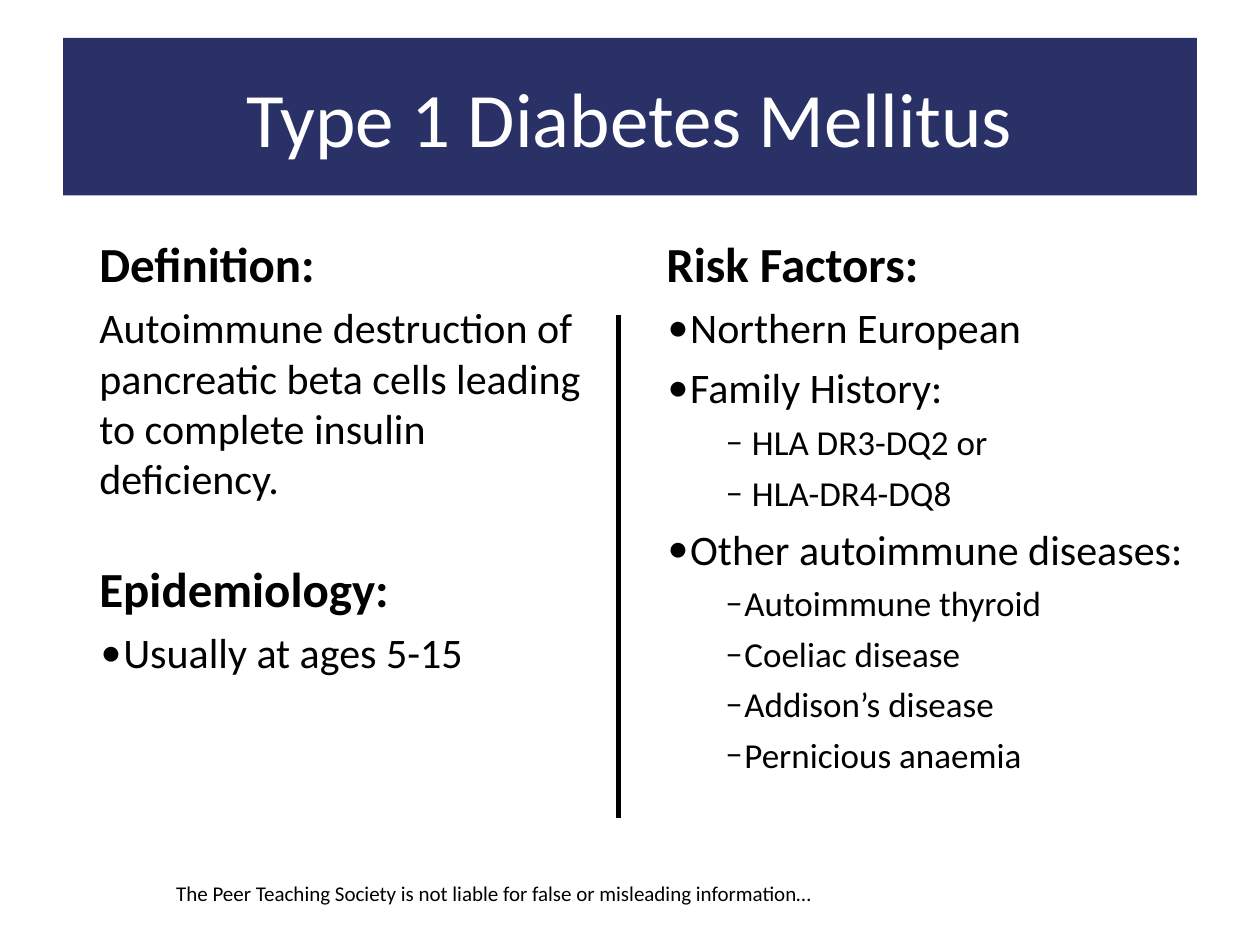
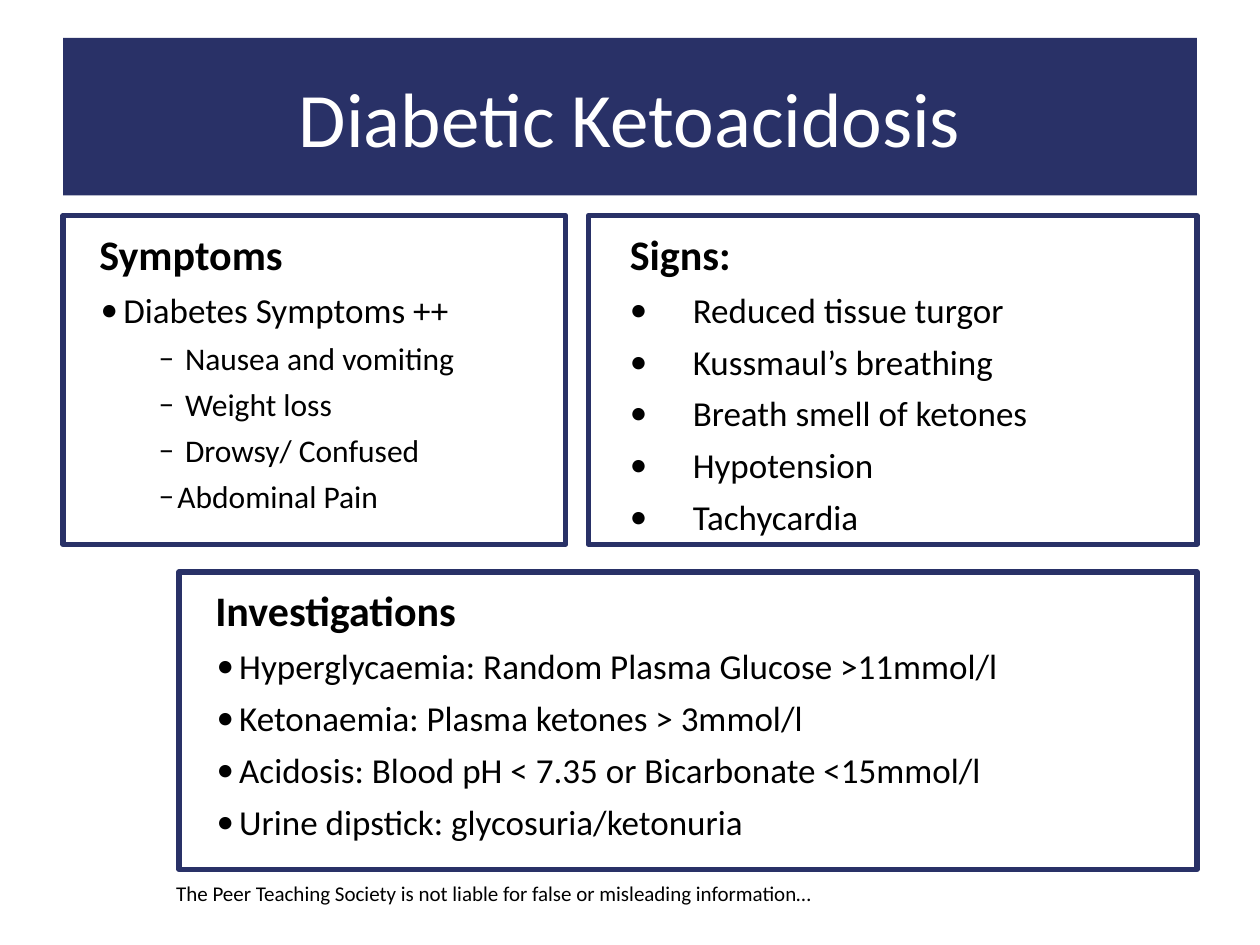
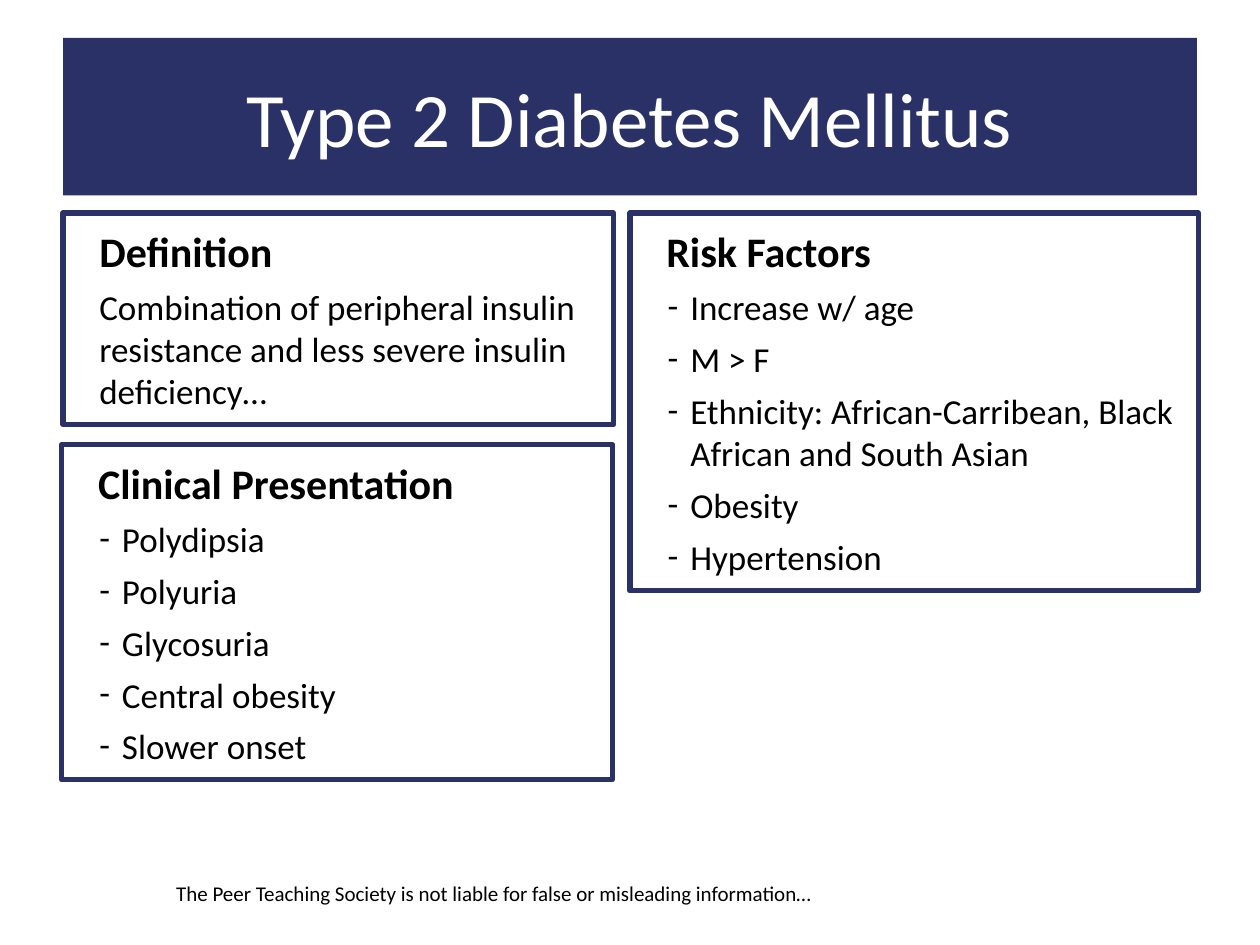
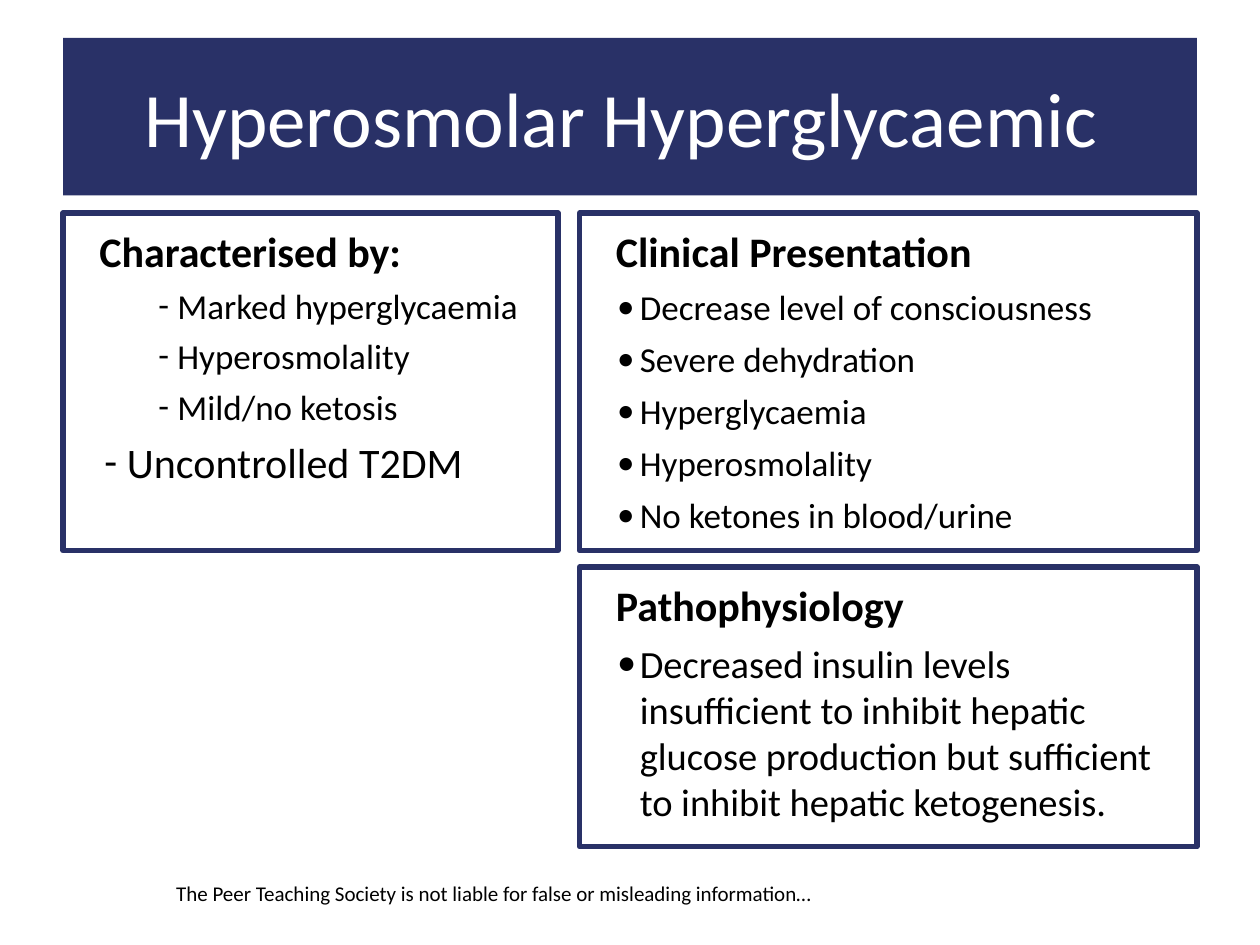
from dataclasses import dataclass

from lxml.etree import SubElement
from pptx import Presentation
from pptx.dml.color import RGBColor
from pptx.enum.shapes import MSO_CONNECTOR, MSO_SHAPE
from pptx.enum.text import MSO_ANCHOR, PP_ALIGN
from pptx.oxml.ns import qn
from pptx.util import Inches, Pt

COLOURS = {"navy": "293167", "text": "000000", "white": "FFFFFF"}
FONT = "Calibri"
FOOTER = "The Peer Teaching Society is not liable for false or misleading information…"
TITLE_ONLY = 5


@dataclass
class Style:
    """Indents in inches, spacing in points and the bullet of a paragraph."""

    left: float = 0.19
    hanging: float = 0
    bullet: str = ""
    space_before: float = 5.6
    level: int = 0


PLAIN = Style()
DOT = Style(0.38, 0.18, "•")
WIDE_DOT = Style(0.73, 0.5, "•")
HYPHEN = Style(0.38, 0.18, "-")
INSET_HYPHEN = Style(0.41, 0.18, "-")
SUB_DASH = Style(0.81, 0.15, "–", 4.8, 1)
SUB_DASH_GAP = Style(0.87, 0.21, "–", 4.8, 1)
SUB_HYPHEN = Style(0.81, 0.15, "-", 4.8, 1)


def colour(name):
    """Return the named colour."""
    return RGBColor.from_string(COLOURS[name])


def place(shape, area):
    """Move a shape to left, top, width and height in inches."""
    shape.left, shape.top, shape.width, shape.height = map(Inches, area)


def prepare_frame(shape, anchor, vertical_inset=0.1):
    """Set wrapping, anchor and insets, and return the text frame."""
    frame = shape.text_frame
    frame.word_wrap = True
    frame.vertical_anchor = anchor
    frame.margin_left = frame.margin_right = Inches(0.1)
    frame.margin_top = frame.margin_bottom = Inches(vertical_inset)
    return frame


def add_run(paragraph, text, size, bold=False, colour_name="text"):
    """Add one formatted run."""
    run = paragraph.add_run()
    run.text = text
    run.font.name = FONT
    run.font.size = Pt(size)
    run.font.bold = bold
    run.font.color.rgb = colour(colour_name)


def apply_style(paragraph, style, first):
    """Give a paragraph its indents, bullet and spacing."""
    properties = paragraph._p.get_or_add_pPr()
    properties.set("marL", str(Inches(style.left)))
    properties.set("indent", str(-Inches(style.hanging)))
    if style.bullet:
        bullet_colour = SubElement(properties, qn("a:buClr"))
        SubElement(bullet_colour, qn("a:srgbClr")).set("val", COLOURS["text"])
        SubElement(properties, qn("a:buFont")).set("typeface", FONT)
        SubElement(properties, qn("a:buChar")).set("char", style.bullet)
    else:
        SubElement(properties, qn("a:buNone"))
    paragraph.level = style.level
    paragraph.alignment = PP_ALIGN.LEFT
    paragraph.space_before = Pt(0 if first else style.space_before)


def add_section(slide, area, heading, groups, heading_size=24, heading_style=PLAIN, framed=True):
    """Write a bold heading and groups of styled lines in an area."""
    if framed:
        shape = slide.shapes.add_shape(MSO_SHAPE.RECTANGLE, *map(Inches, area))
        shape.shadow.inherit = False
        shape.fill.background()
        shape.line.color.rgb = colour("navy")
        shape.line.width = Pt(3)
    else:
        shape = slide.shapes.add_textbox(*map(Inches, area))
    frame = prepare_frame(shape, MSO_ANCHOR.TOP)
    paragraph = frame.paragraphs[0]
    apply_style(paragraph, heading_style, True)
    add_run(paragraph, heading, heading_size, bold=True)
    for style, size, lines in groups:
        for line in lines:
            paragraph = frame.add_paragraph()
            apply_style(paragraph, style, False)
            add_run(paragraph, line, size)


def add_divider(slide, x, top, bottom):
    """Draw the vertical rule between two columns."""
    divider = slide.shapes.add_connector(
        MSO_CONNECTOR.STRAIGHT, Inches(x), Inches(top), Inches(x), Inches(bottom)
    )
    divider.line.color.rgb = colour("text")
    divider.line.width = Pt(3)
    SubElement(divider._element.spPr, qn("a:effectLst"))


def add_topic_slide(presentation, title, right_inset=0.1):
    """Add a slide with the title band and the footer."""
    slide = presentation.slides.add_slide(presentation.slide_layouts[TITLE_ONLY])
    band = slide.shapes.title
    place(band, (0.5, 0.3, 9, 1.25))
    band.fill.solid()
    band.fill.fore_color.rgb = colour("navy")
    frame = prepare_frame(band, MSO_ANCHOR.MIDDLE)
    frame.margin_right = Inches(right_inset)
    paragraph = frame.paragraphs[0]
    paragraph.alignment = PP_ALIGN.CENTER
    add_run(paragraph, title, 44, colour_name="white")

    footer = slide.shapes.add_textbox(*map(Inches, (1.3, 6.94, 5.54, 0.3)))
    paragraph = prepare_frame(footer, MSO_ANCHOR.TOP, 0.05).paragraphs[0]
    add_run(paragraph, FOOTER, 12)
    return slide


def build_type_1(presentation):
    """Build the slide on type 1 diabetes."""
    slide = add_topic_slide(presentation, "Type 1 Diabetes Mellitus")
    columns = [
        ((0.5, 1.75, 4.32, 1.75), "Definition:", [
            (PLAIN, 24, [
                "Autoimmune destruction of pancreatic beta cells leading "
                "to complete insulin deficiency.",
            ]),
        ]),
        ((0.5, 4.33, 3.61, 1.13), "Epidemiology:", [(DOT, 24, ["Usually at ages 5-15"])]),
        ((5, 1.75, 4.5, 1.75), "Risk Factors:", [
            (DOT, 24, ["Northern European", "Family History:"]),
            (SUB_DASH_GAP, 20, ["HLA DR3-DQ2 or", "HLA-DR4-DQ8"]),
            (DOT, 24, ["Other autoimmune diseases:"]),
            (SUB_DASH, 20, [
                "Autoimmune thyroid",
                "Coeliac disease",
                "Addison’s disease",
                "Pernicious anaemia",
            ]),
        ]),
    ]
    for area, heading, groups in columns:
        add_section(slide, area, heading, groups, heading_size=28, framed=False)
    add_divider(slide, 4.91, 2.5, 6.49)


def build_ketoacidosis(presentation):
    """Build the slide on diabetic ketoacidosis."""
    slide = add_topic_slide(presentation, "Diabetic Ketoacidosis")
    top, height = 1.71, 2.61
    add_section(slide, (0.5, top, 3.99, height), "Symptoms", [
        (DOT, 20, ["Diabetes Symptoms ++"]),
        (SUB_DASH_GAP, 18, ["Nausea and vomiting", "Weight loss", "Drowsy/ Confused"]),
        (SUB_DASH, 18, ["Abdominal Pain"]),
    ])
    add_section(slide, (4.67, top, 4.83, height), "Signs:", [
        (WIDE_DOT, 20, [
            "Reduced tissue turgor",
            "Kussmaul’s breathing",
            "Breath smell of ketones",
            "Hypotension",
            "Tachycardia",
        ]),
    ], heading_style=Style(left=0.23))
    add_section(slide, (1.42, 4.54, 8.08, 2.36), "Investigations", [
        (DOT, 20, [
            "Hyperglycaemia: Random Plasma Glucose >11mmol/l",
            "Ketonaemia: Plasma ketones > 3mmol/l",
            "Acidosis: Blood pH < 7.35 or Bicarbonate <15mmol/l",
            "Urine dipstick: glycosuria/ketonuria",
        ]),
    ])


def build_type_2(presentation):
    """Build the slide on type 2 diabetes."""
    slide = add_topic_slide(presentation, "Type 2 Diabetes Mellitus")
    top, width = 1.69, 4.37
    add_section(slide, (0.5, top, width, 1.68), "Definition", [
        (PLAIN, 20, [
            "Combination of peripheral insulin resistance and less severe insulin deficiency…",
        ]),
    ])
    add_section(slide, (5, top, 4.51, 3), "Risk Factors", [
        (HYPHEN, 20, [
            "Increase w/ age",
            "M > F",
            "Ethnicity: African-Carribean, Black African and South Asian",
            "Obesity",
            "Hypertension",
        ]),
    ])
    add_section(slide, (0.49, 3.53, width, 2.66), "Clinical Presentation", [
        (HYPHEN, 20, ["Polydipsia", "Polyuria", "Glycosuria", "Central obesity", "Slower onset"]),
    ])


def build_hyperosmolar(presentation):
    """Build the slide on the hyperosmolar hyperglycaemic state."""
    slide = add_topic_slide(presentation, "Hyperosmolar Hyperglycaemic", right_inset=0.24)
    top, height = 1.69, 2.68
    right, width = 4.6, 4.9
    add_section(slide, (0.5, top, 3.93, height), "Characterised by:", [
        (SUB_HYPHEN, 20, ["Marked hyperglycaemia", "Hyperosmolality", "Mild/no ketosis"]),
        (INSET_HYPHEN, 24, ["Uncontrolled T2DM"]),
    ])
    add_section(slide, (right, top, width, height), "Clinical Presentation", [
        (DOT, 20, [
            "Decrease level of consciousness",
            "Severe dehydration",
            "Hyperglycaemia",
            "Hyperosmolality",
            "No ketones in blood/urine",
        ]),
    ])
    add_section(slide, (right, 4.5, width, 2.22), "Pathophysiology", [
        (DOT, 22, [
            "Decreased insulin levels insufficient to inhibit hepatic glucose production "
            "but sufficient to inhibit hepatic ketogenesis.",
        ]),
    ])


def main():
    """Build and save the presentation."""
    presentation = Presentation()
    presentation.slide_width = Inches(10)
    presentation.slide_height = Inches(7.5)
    build_type_1(presentation)
    build_ketoacidosis(presentation)
    build_type_2(presentation)
    build_hyperosmolar(presentation)
    presentation.save("out.pptx")


if __name__ == "__main__":
    main()
